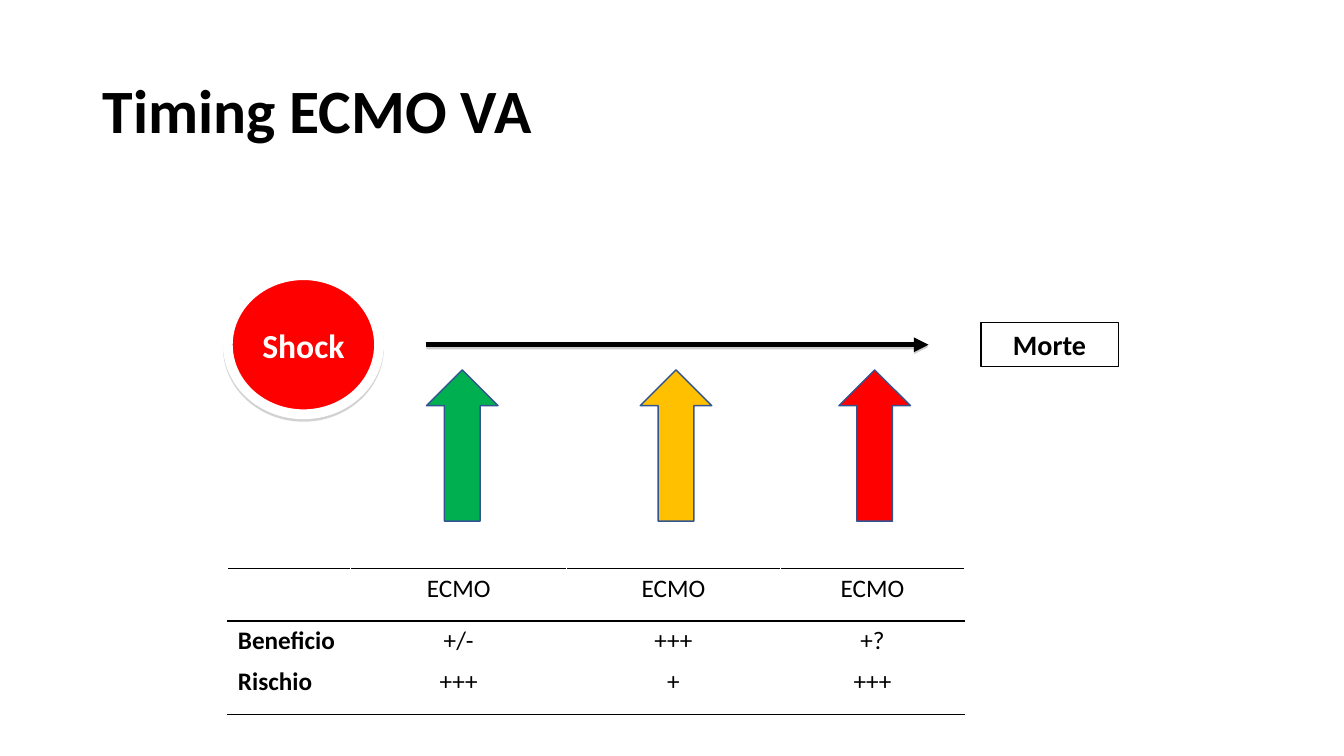
"""Build the slide on the timing of VA ECMO between shock and death."""
from lxml.etree import SubElement
from pptx import Presentation
from pptx.dml.color import RGBColor
from pptx.enum.shapes import MSO_CONNECTOR as Connector, MSO_SHAPE as Shape
from pptx.enum.text import MSO_ANCHOR as Anchor, PP_ALIGN as Align
from pptx.oxml.ns import qn
from pptx.util import Inches, Pt

FONT = "Calibri"
BLACK, WHITE, RED = "000000", "FFFFFF", "FF0000"
TITLE = "Timing ECMO VA"
START, END = "Shock", "Morte"
TIMINGS = [(4.23, "00B050"), (6.35, "FFC000"), (8.32, RED)]
ROWS = [
    ["", "ECMO", "ECMO", "ECMO"],
    ["Beneficio", "+/-", "+++", "+?"],
    ["Rischio", "+++", "+", "+++"],
]
COLUMN_WIDTHS = [1.22, 2.14, 2.12, 1.83]
ROW_HEIGHTS = [0.52, 0.4, 0.52]
RULES = [(BLACK, BLACK), (BLACK, WHITE), (WHITE, BLACK)]
AXIS_Y = 3.42


def color(value):
    return RGBColor.from_string(value)


def write(frame, text, size, ink=BLACK, bold=False, align=Align.CENTER):
    frame.text = text
    paragraph = frame.paragraphs[0]
    paragraph.alignment = align
    for run in paragraph.runs:
        run.font.name, run.font.size, run.font.bold = FONT, Pt(size), bold
        run.font.color.rgb = color(ink)


def outline(item, ink, width):
    item.line.color.rgb = color(ink)
    item.line.width = Pt(width)


def add_box(kind, box, fill, line, width):
    shape = slide.shapes.add_shape(kind, *map(Inches, box))
    shape.shadow.inherit = False
    if fill:
        shape.fill.solid()
        shape.fill.fore_color.rgb = color(fill)
    else:
        shape.fill.background()
    outline(shape, line, width)
    return shape


def add_shadow(properties, opacity, distance):
    effects = properties.find(qn("a:effectLst"))
    if effects is None:
        effects = SubElement(properties, qn("a:effectLst"))
    shadow = SubElement(effects, qn("a:outerShdw"), blurRad="0", dist=str(Pt(distance)),
                        dir="5400000", rotWithShape="0")
    tint = SubElement(shadow, qn("a:srgbClr"), val="808080")
    SubElement(tint, qn("a:alpha"), val=str(opacity * 1000))


def add_border(cell, side, ink):
    border = SubElement(cell._tc.get_or_add_tcPr(), qn(f"a:ln{side}"), w=str(Pt(1)))
    SubElement(SubElement(border, qn("a:solidFill")), qn("a:srgbClr"), val=ink)


deck = Presentation()
deck.slide_width, deck.slide_height = Inches(13.33), Inches(7.5)
slide = deck.slides.add_slide(deck.slide_layouts[5])

title = slide.shapes.title
title.left, title.top, title.width, title.height = map(Inches, (0.92, 0.4, 11.5, 1.45))
write(title.text_frame, TITLE, 44, bold=True, align=Align.LEFT)
title.text_frame.vertical_anchor = Anchor.MIDDLE
title.text_frame.paragraphs[0].line_spacing = 0.9

shock = add_box(Shape.OVAL, (2.26, AXIS_Y - 0.69, 1.5, 1.38), RED, WHITE, 7)
write(shock.text_frame, START, 24, WHITE, bold=True)
shock.text_frame.word_wrap = False
add_shadow(shock._element.spPr, 35, 1.8)

death = add_box(Shape.RECTANGLE, (9.73, AXIS_Y - 0.22, 1.36, 0.44), None, BLACK, 0.75)
write(death.text_frame, END, 20, bold=True)

course = slide.shapes.add_connector(
    Connector.STRAIGHT, *map(Inches, (4.23, AXIS_Y, 9.21, AXIS_Y)))
outline(course, BLACK, 3.5)
SubElement(course.line._get_or_add_ln(), qn("a:tailEnd"), type="triangle")
add_shadow(course._element.spPr, 38, 1.6)

for left, fill in TIMINGS:
    add_box(Shape.UP_ARROW, (left, 3.67, 0.71, 1.5), fill, "325491", 1)

table = slide.shapes.add_table(
    len(ROWS), len(COLUMN_WIDTHS),
    *map(Inches, (2.26, 5.64, sum(COLUMN_WIDTHS), sum(ROW_HEIGHTS)))).table
table.first_row = table.horz_banding = False
for column, width in zip(table.columns, COLUMN_WIDTHS):
    column.width = Inches(width)
for row, height, texts, (top, bottom) in zip(table.rows, ROW_HEIGHTS, ROWS, RULES):
    row.height = Inches(height)
    for index, (cell, text) in enumerate(zip(row.cells, texts)):
        label = index == 0
        write(cell.text_frame, text, 18, bold=label,
              align=Align.LEFT if label else Align.CENTER)
        for side, ink in (("L", WHITE), ("R", WHITE), ("T", top), ("B", bottom)):
            add_border(cell, side, ink)
        cell.fill.background()

deck.save("out.pptx")
